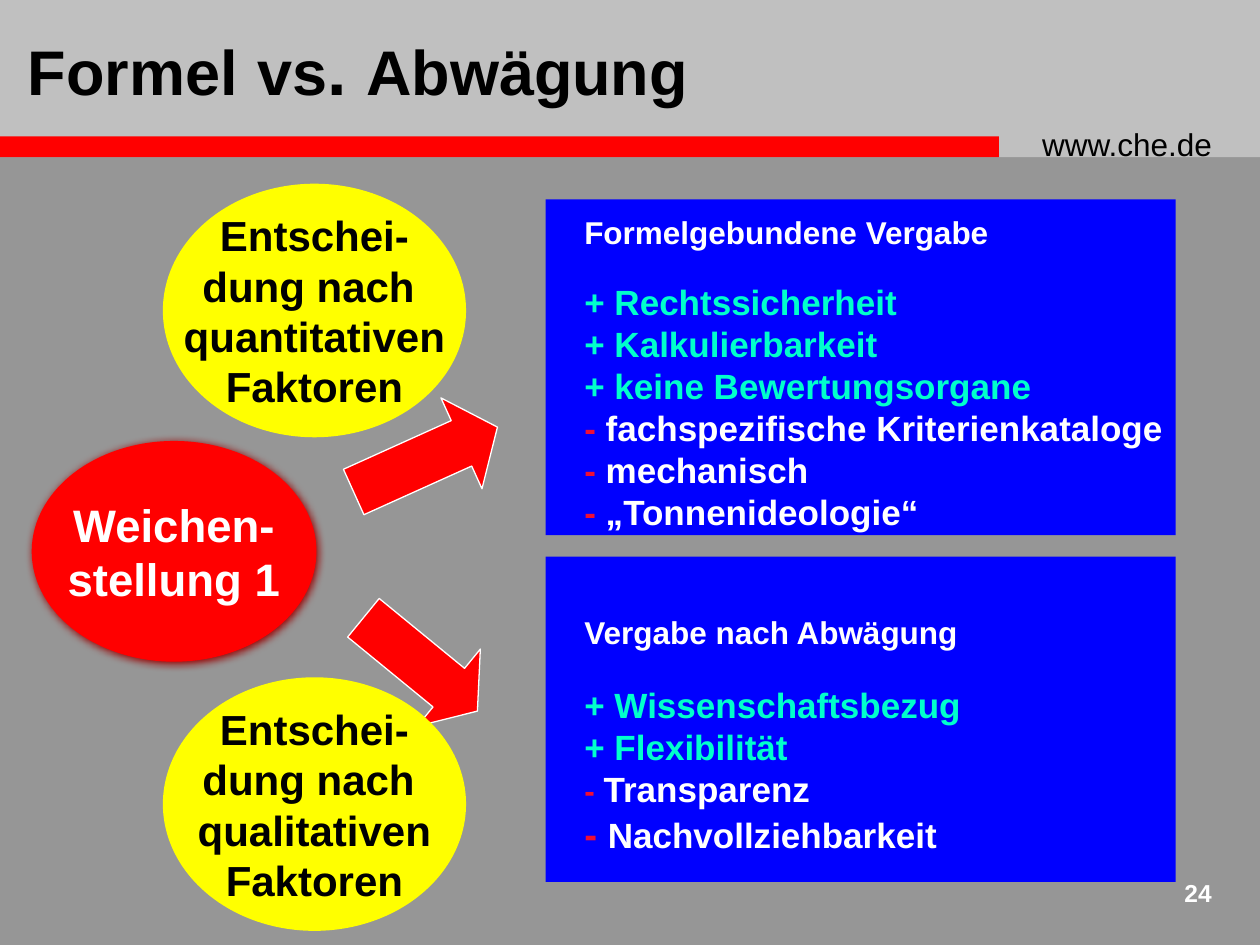
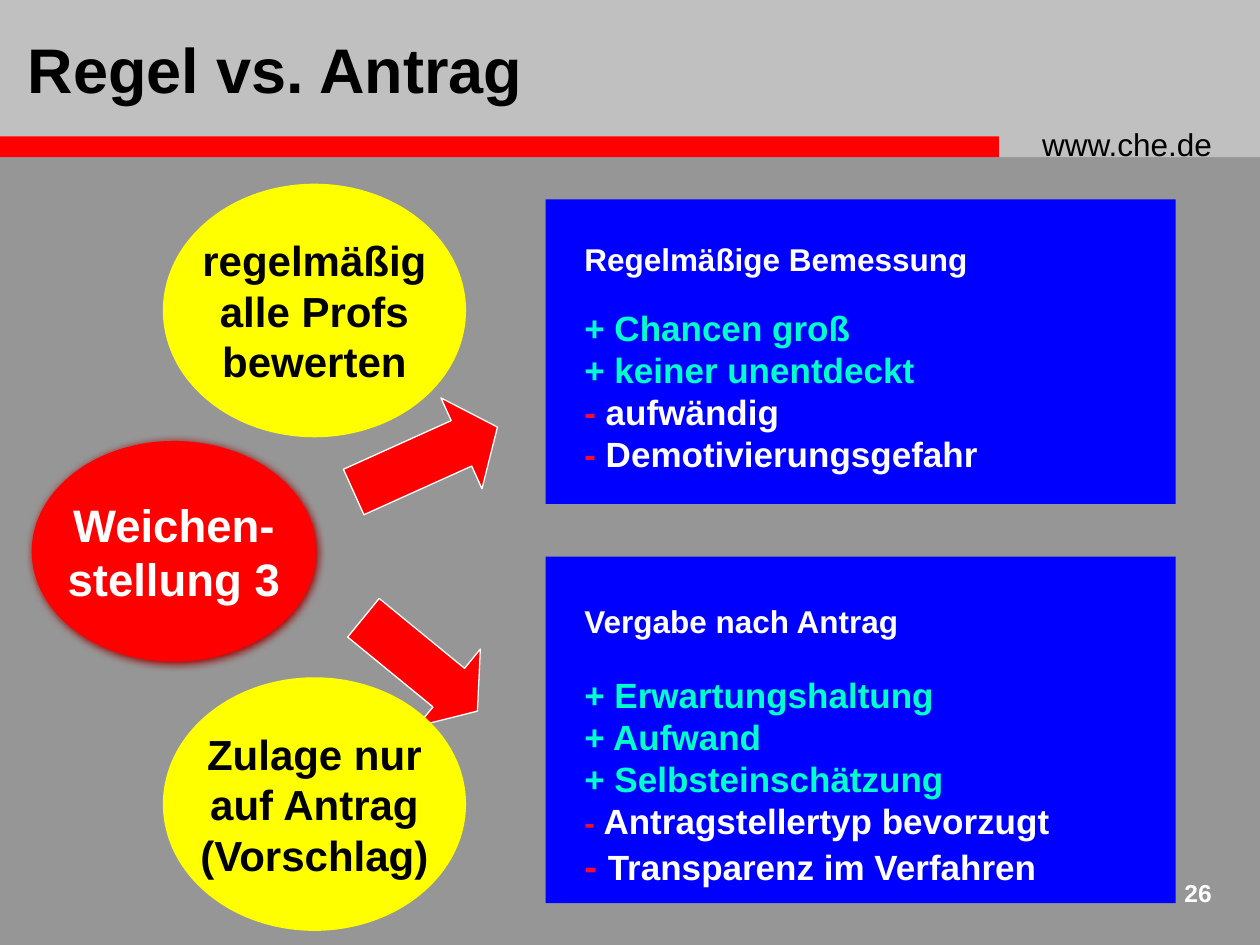
"""Build two slides that weigh alternative ways of awarding performance bonuses."""
from dataclasses import dataclass
from typing import Any, NamedTuple

from lxml.etree import SubElement
from pptx import Presentation
from pptx.dml.color import RGBColor
from pptx.enum.shapes import MSO_SHAPE
from pptx.enum.text import MSO_ANCHOR, MSO_AUTO_SIZE, PP_ALIGN
from pptx.oxml.ns import qn
from pptx.util import Cm, Pt


@dataclass(frozen=True)
class Theme:
    font: str = "Arial"
    background: str = "969696"
    band: str = "C0C0C0"
    red: str = "FF0000"
    shadow: str = "990000"
    yellow: str = "FFFF00"
    blue: str = "0000FF"
    pro: str = "00FFCC"
    con: str = "F00E34"
    black: str = "000000"
    white: str = "FFFFFF"
    title: int = 36
    title_gap: int = 40
    switch: int = 26
    option: int = 24
    body: int = 20
    heading: int = 18
    number: int = 14


THEME = Theme()
INSET = 0.13


class Frame(NamedTuple):
    left: float
    top: float
    width: float
    height: float


class Span(NamedTuple):
    text: str
    size: int
    color: str
    bold: bool = True


class Line(NamedTuple):
    spans: list[Span]
    spacing: float = 1.0


class PanelStyle(NamedTuple):
    top: float
    heading_spacing: float
    first_spacing: float
    dash_sizes: tuple[int, ...]


class Panel(NamedTuple):
    height: float
    heading: str
    pros: list[str]
    cons: list[str]


class Arrow(NamedTuple):
    frame: Frame
    rotation: float
    head: float


class Comparison(NamedTuple):
    number: str
    title: list[Span]
    title_width: float
    switch: list[str]
    options: list[list[str]]
    panels: list[Panel]


SWITCH = Frame(0.64, 8.89, 5.74, 4.45)
OPTION_TOPS = (3.81, 13.76)
PANEL_STYLES = (
    PanelStyle(4.02, 1.3, 1.7, (THEME.body,) * 3),
    PanelStyle(11.22, 1.8, 1.8, (18, 22)),
)
ARROWS = (
    Arrow(Frame(6.99, 8.26, 3.18, 2.01), 335.7, 0.396),
    Arrow(Frame(6.99, 12.39, 2.97, 2.01), 39.3, 0.371),
)


def title_span(text: str, size: int = THEME.title) -> Span:
    """Return a span in the title style."""
    return Span(text, size, THEME.black)


COMPARISONS = [
    Comparison(
        "24",
        [
            title_span("Formel"),
            title_span(" ", THEME.title_gap),
            title_span("vs"),
            title_span(". ", THEME.title_gap),
            title_span("Abwägung"),
        ],
        19.69,
        ["Weichen-", "stellung 1"],
        [
            ["Entschei-", "dung nach ", "quantitativen", "Faktoren"],
            ["Entschei-", "dung nach ", "qualitativen", "Faktoren"],
        ],
        [
            Panel(
                6.77,
                "Formelgebundene Vergabe",
                ["Rechtssicherheit", "Kalkulierbarkeit", "keine Bewertungsorgane"],
                ["fachspezifische Kriterienkataloge", "mechanisch", "„Tonnenideologie“"],
            ),
            Panel(
                6.56,
                "Vergabe nach Abwägung",
                ["Wissenschaftsbezug", "Flexibilität"],
                ["Transparenz", "Nachvollziehbarkeit"],
            ),
        ],
    ),
    Comparison(
        "26",
        [title_span("Regel vs. Antrag")],
        14.17,
        ["Weichen-", "stellung 3"],
        [
            ["regelmäßig", "alle Profs", "bewerten"],
            ["Zulage nur", "auf Antrag", "(Vorschlag)"],
        ],
        [
            Panel(
                6.14,
                "Regelmäßige Bemessung",
                ["Chancen groß", "keiner unentdeckt"],
                ["aufwändig", "Demotivierungsgefahr"],
            ),
            Panel(
                6.99,
                "Vergabe nach Antrag",
                ["Erwartungshaltung", "Aufwand", "Selbsteinschätzung"],
                ["Antragstellertyp bevorzugt", "Transparenz im Verfahren"],
            ),
        ],
    ),
]


def assign(target: Any, values: dict[str, Any]) -> None:
    """Set every attribute named in the dict."""
    for name, value in values.items():
        setattr(target, name, value)


def place(box: Any, frame: Frame) -> None:
    """Move and size a box."""
    assign(box, {name: Cm(value) for name, value in frame._asdict().items()})


def write(box: Any, lines: list[Line], align: Any = PP_ALIGN.LEFT, **options: Any) -> None:
    """Fill a box with formatted lines."""
    text = box.text_frame
    margins = {f"margin_{side}": Cm(INSET) for side in ("left", "top", "right", "bottom")}
    defaults = {
        "word_wrap": True,
        "auto_size": MSO_AUTO_SIZE.NONE,
        "vertical_anchor": MSO_ANCHOR.MIDDLE,
    }
    assign(text, margins | defaults | options)
    for index, line in enumerate(lines):
        para = text.add_paragraph() if index else text.paragraphs[0]
        assign(para, {"alignment": align, "line_spacing": line.spacing})
        for span in line.spans:
            run = para.add_run()
            run.text = span.text
            assign(run.font, {"name": THEME.font, "size": Pt(span.size), "bold": span.bold})
            run.font.color.rgb = RGBColor.from_string(span.color)


def add_block(page: Any, kind: Any, frame: Frame, fill: str, line: str = "", weight: float = 0) -> Any:
    """Add a filled preset shape, with an outline when a line colour is given."""
    block = page.shapes.add_shape(kind, *map(Cm, frame))
    block.shadow.inherit = False
    block.fill.solid()
    block.fill.fore_color.rgb = RGBColor.from_string(fill)
    if line:
        block.line.color.rgb = RGBColor.from_string(line)
        block.line.width = Pt(weight)
    else:
        block.line.fill.background()
    return block


def add_label(page: Any, frame: Frame, span: Span, **options: Any) -> Any:
    """Add a one-line text box."""
    label = page.shapes.add_textbox(*map(Cm, frame))
    write(label, [Line([span])], vertical_anchor=MSO_ANCHOR.TOP, **options)
    return label


def add_oval(page: Any, frame: Frame, rows: list[str], size: int, color: str, **style: Any) -> Any:
    """Add an ellipse with centred rows of text."""
    oval = add_block(page, MSO_SHAPE.OVAL, frame, **style)
    lines = [Line([Span(row, size, color)]) for row in rows]
    write(oval, lines, PP_ALIGN.CENTER, word_wrap=False)
    return oval


def add_glow(box: Any) -> None:
    """Give a box a soft dark red shadow."""
    effects = box.element.spPr.find(qn("a:effectLst"))
    shadow = SubElement(
        effects, qn("a:outerShdw"),
        blurRad=str(Pt(5)), dist=str(Pt(1.4)), dir=str(45 * 60000), rotWithShape="0",
    )
    SubElement(shadow, qn("a:srgbClr"), val=THEME.shadow)


def add_panel(page: Any, panel: Panel, style: PanelStyle) -> None:
    """Add a blue panel that lists advantages and drawbacks."""
    frame = Frame(11, style.top, 12.7, panel.height)
    box = add_block(page, MSO_SHAPE.RECTANGLE, frame, THEME.blue)
    lines = [Line([Span(panel.heading, THEME.heading, THEME.white)], style.heading_spacing)]
    for index, pro in enumerate(panel.pros):
        spacing = 1.0 if index else style.first_spacing
        lines.append(Line([Span(f"+ {pro}", THEME.body, THEME.pro)], spacing))
    for con, dash_size in zip(panel.cons, style.dash_sizes):
        dash = Span("- ", dash_size, THEME.con)
        lines.append(Line([dash, Span(con, THEME.body, THEME.white)]))
    write(box, lines, margin_left=Cm(0.78), margin_right=Cm(0))


def add_arrow(page: Any, arrow: Arrow) -> None:
    """Add a turned red block arrow."""
    shape = add_block(page, MSO_SHAPE.RIGHT_ARROW, arrow.frame, THEME.red, THEME.white, 0.75)
    shape.rotation = arrow.rotation
    shape.adjustments[1] = arrow.head


def dress_master(deck: Any, page: Any) -> None:
    """Move the shared bands and address to the slide master."""
    master = deck.slide_master
    master.background.fill.solid()
    master.background.fill.fore_color.rgb = RGBColor.from_string(THEME.background)
    address = Span("www.che.de", THEME.heading, THEME.black, False)
    shared = [
        add_block(page, MSO_SHAPE.RECTANGLE, Frame(0, 0, 25.4, 3.17), THEME.band),
        add_block(page, MSO_SHAPE.RECTANGLE, Frame(0, 2.75, 20.14, 0.42), THEME.red),
        add_label(page, Frame(20.88, 2.39, 4.19, 0.97), address),
    ]
    for box in shared:
        master.shapes.element.append(box.element)


def fill_page(page: Any, comparison: Comparison) -> None:
    """Draw one comparison on a page."""
    title = page.shapes.title
    place(title, Frame(0.43, 0, comparison.title_width, 2.74))
    write(title, [Line(comparison.title)])
    number = Span(comparison.number, THEME.number, THEME.white)
    add_label(page, Frame(23.72, 17.58, 0.84, 0.81), number, align=PP_ALIGN.RIGHT, word_wrap=False)
    for panel, style in zip(comparison.panels, PANEL_STYLES):
        add_panel(page, panel, style)
    switch = add_oval(page, SWITCH, comparison.switch, THEME.switch, THEME.white, fill=THEME.red)
    add_glow(switch)
    for arrow in ARROWS:
        add_arrow(page, arrow)
    for top, rows in zip(OPTION_TOPS, comparison.options):
        frame = Frame(3.39, top, 5.9, 4.9)
        add_oval(page, frame, rows, THEME.option, THEME.black,
                 fill=THEME.yellow, line=THEME.yellow, weight=6)


def main() -> None:
    """Build and save the deck."""
    deck = Presentation()
    assign(deck, {"slide_width": Cm(25.4), "slide_height": Cm(19.05)})
    pages = [deck.slides.add_slide(deck.slide_layouts[5]) for _ in COMPARISONS]
    dress_master(deck, pages[0])
    for page, comparison in zip(pages, COMPARISONS):
        fill_page(page, comparison)
    deck.save("out.pptx")


if __name__ == "__main__":
    main()
